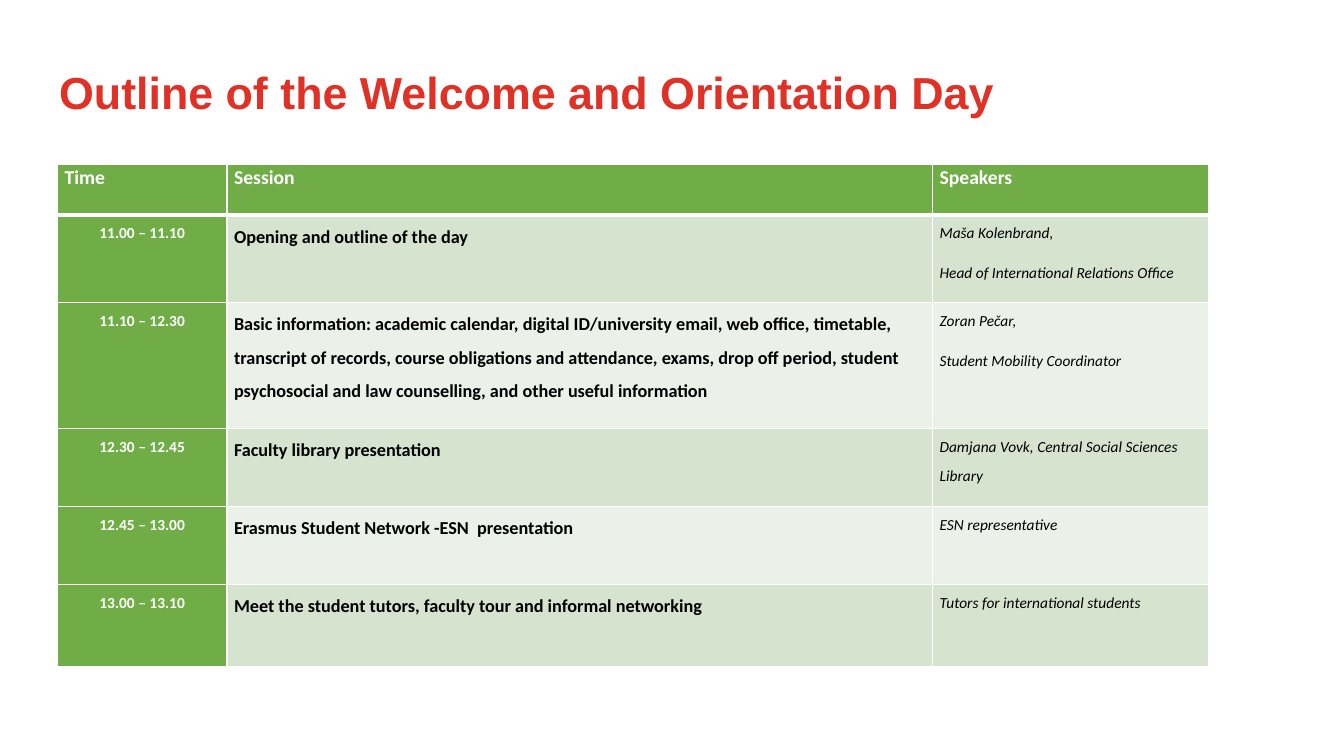
"""Build the schedule slide of the welcome and orientation day."""
from lxml import etree
from pptx import Presentation
from pptx.dml.color import RGBColor
from pptx.enum.text import MSO_ANCHOR, PP_ALIGN
from pptx.oxml.ns import qn
from pptx.util import Cm, Pt

LEFT, CENTER = PP_ALIGN.LEFT, PP_ALIGN.CENTER
MIDDLE = MSO_ANCHOR.MIDDLE
RED = RGBColor(0xE0, 0x31, 0x27)
GREEN = RGBColor(0x70, 0xAD, 0x47)
SAGE = RGBColor(0xD5, 0xE3, 0xCF)
PALE = RGBColor(0xEB, 0xF1, 0xE9)
WHITE = RGBColor(0xFF, 0xFF, 0xFF)
BLACK = RGBColor(0, 0, 0)

HEADS = ["Time", "Session", "Speakers"]
PLAN = [
    ("11.00 – 11.10", "Opening and outline of the day",
     ["Maša Kolenbrand,", "Head of International Relations Office"]),
    ("11.10 – 12.30",
     "Basic information: academic calendar, digital ID/university email, "
     "web office, timetable, transcript of records, course obligations and "
     "attendance, exams, drop off period, student psychosocial and law "
     "counselling, and other useful information",
     ["Zoran Pečar,", "Student Mobility Coordinator"]),
    ("12.30 – 12.45", "Faculty library presentation",
     ["Damjana Vovk, Central Social Sciences Library"]),
    ("12.45 – 13.00", "Erasmus Student Network -ESN  presentation",
     ["ESN representative"]),
    ("13.00 – 13.10",
     "Meet the student tutors, faculty tour and informal networking",
     ["Tutors for international students"]),
]
WIDTHS = [4.27, 17.78, 6.96]
HEIGHTS = [1.27, 2.21, 3.18, 1.96, 1.96, 2.08]


class Deck:
    """Hold the style and the current slide."""

    def __init__(self):
        self.show = Presentation()
        self.show.slide_width, self.show.slide_height = Cm(33.87), Cm(19.05)
        self.slide = self.show.slides.add_slide(self.show.slide_layouts[6])
        self.face, self.body = "Arial", "Calibri"

    def words(self, para, text, face, size, color, bold=True, slant=False):
        run = para.add_run()
        run.text = text
        font = run.font
        font.name, font.size, font.bold, font.italic = face, Pt(size), bold, slant
        font.color.rgb = color

    def title(self, text, left, top, width, height):
        frame = self.slide.shapes.add_textbox(
            Cm(left), Cm(top), Cm(width), Cm(height)).text_frame
        frame.word_wrap = True
        frame.vertical_anchor = MIDDLE
        para = frame.paragraphs[0]
        para.line_spacing = 0.9
        self.words(para, text, self.face, 32, RED)

    def table(self, left, top, widths, heights):
        grid = self.slide.shapes.add_table(
            len(heights), len(widths), Cm(left), Cm(top),
            Cm(sum(widths)), Cm(sum(heights))).table
        for col, width in zip(grid.columns, widths):
            col.width = Cm(width)
        for row, height in zip(grid.rows, heights):
            row.height = Cm(height)
        return grid

    def edge(self, cell, over, under):
        props = cell._tc.get_or_add_tcPr()
        sides = {"L": 1, "R": 1, "T": over, "B": under}
        for spot, (side, width) in enumerate(sides.items()):
            line = etree.Element(qn(f"a:ln{side}"), w=str(Pt(width)))
            fill = etree.SubElement(line, qn("a:solidFill"))
            etree.SubElement(fill, qn("a:srgbClr"), val=str(WHITE))
            props.insert(spot, line)

    def cell(self, cell, lines, fill, size, color, bold=True, slant=False,
             align=LEFT, lead=1.5, over=1, under=1):
        cell.fill.solid()
        cell.fill.fore_color.rgb = fill
        cell.margin_left = cell.margin_right = Cm(0.18)
        cell.margin_top = cell.margin_bottom = 0
        frame = cell.text_frame
        for spot, text in enumerate(lines):
            para = frame.add_paragraph() if spot else frame.paragraphs[0]
            para.alignment, para.line_spacing = align, lead
            para.space_after = Pt(8)
            self.words(para, text, self.body, size, color, bold, slant)
        self.edge(cell, over, under)


def main():
    deck = Deck()
    deck.title("Outline of the Welcome and Orientation Day",
               1.24, 1.07, 28.22, 2.64)
    grid = deck.table(1.45, 4.14, WIDTHS, HEIGHTS)
    for col, head in enumerate(HEADS):
        deck.cell(grid.cell(0, col), [head], GREEN, 14, WHITE,
                  lead=1.07, under=3)
    for row, (time, topic, names) in enumerate(PLAN, 1):
        band = SAGE if row % 2 else PALE
        over = 3 if row == 1 else 1
        deck.cell(grid.cell(row, 0), [time], GREEN, 11, WHITE,
                  align=CENTER, over=over)
        deck.cell(grid.cell(row, 1), [topic], band, 13, BLACK, over=over)
        deck.cell(grid.cell(row, 2), names, band, 11, BLACK,
                  bold=False, slant=True, over=over)
    deck.show.save("out.pptx")


if __name__ == "__main__":
    main()
